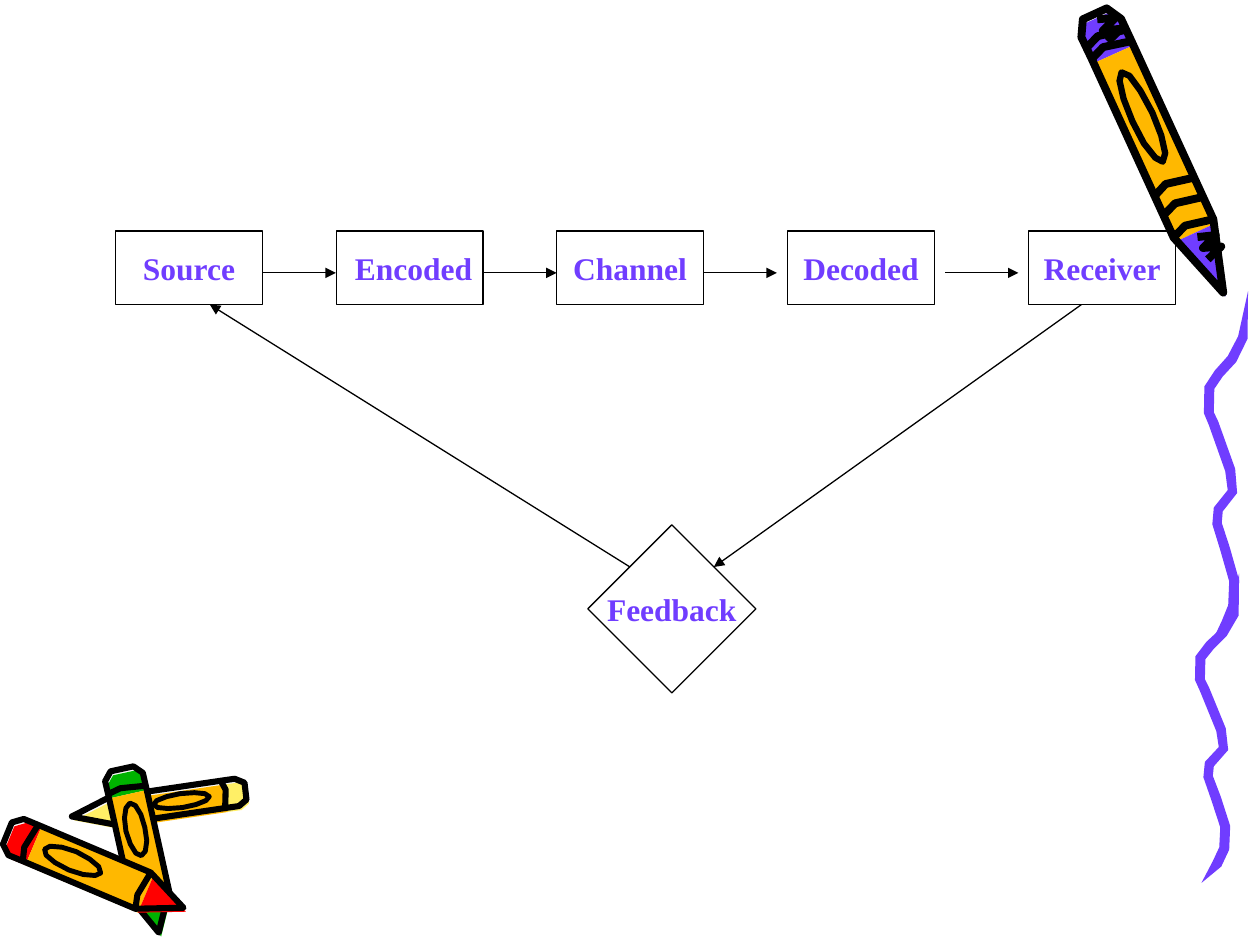
from math import cos, hypot, pi, sin

from lxml.etree import SubElement
from pptx import Presentation
from pptx.dml.color import RGBColor
from pptx.enum.shapes import MSO_CONNECTOR as CONN, MSO_SHAPE as SHAPE
from pptx.enum.text import MSO_ANCHOR as ANCHOR, PP_ALIGN as ALIGN
from pptx.oxml.ns import qn
from pptx.util import Cm, Pt

COLORS = {
    "purple": "703DFF", "orange": "FFB800", "yellow": "FFEF66", "red": "FF0000",
    "green": "00B200", "pale": "F8F8F8", "black": "000000",
}
FONT = "Times New Roman"

BOX_WIDTH, BOX_HEIGHT, BOX_TOP = 2.96, 1.48, 4.66
BOX_BOTTOM = BOX_TOP + BOX_HEIGHT
ARROW_LENGTH, ARROW_Y = 1.48, 5.5
STEPS = {"Source": 2.33, " Encoded": 6.78, "Channel": 11.22,
         "Decoded": 15.88, "Receiver": 20.74}
ARROW_STARTS = [5.29, 9.74, 14.18, 19.05]

CAP_END, SHOULDER = 0.13, 0.77
LABEL_CENTER, LABEL_REACH, LABEL_SPREAD = 0.37, 0.16, 0.5
INK_SHIFT = (0.05, 0.08)

RIBBON_WIDTH, RIBBON_HALF = 0.91, 0.1
RIBBON_COURSE = [
    (0.97, 0), (0.85, 0.13), (0.61, 0.19), (0.32, 0.23), (0.11, 0.27), (0.1, 0.34),
    (0.2, 0.37), (0.57, 0.5), (0.62, 0.56), (0.31, 0.61), (0.28, 0.65),
    (0.46, 0.72), (0.66, 0.81), (0.64, 0.88), (0.48, 0.93), (0.13, 0.99),
]


def color(name):
    return RGBColor.from_string(COLORS[name])


def add_path(s, points, fill=None, stroke=None, close=True):
    grid = [(round(100 * x), round(100 * y)) for x, y in points]
    builder = s.shapes.build_freeform(*grid[0], scale=Cm(0.01))
    builder.add_line_segments(grid[1:], close=close)
    sp = builder.convert_to_shape()
    sp.shadow.inherit = False
    if fill:
        sp.fill.solid()
        sp.fill.fore_color.rgb = color(fill)
    else:
        sp.fill.background()
    if stroke:
        sp.line.color.rgb = color("black")
        sp.line.width = Pt(stroke)
        SubElement(sp._element.spPr.find(qn("a:ln")), qn("a:round"))
    else:
        sp.line.fill.background()


def add_crayon(s, base, tip, half, tint, stroke, bands=(), scribbles=()):
    dx, dy = tip[0] - base[0], tip[1] - base[1]
    length = hypot(dx, dy)

    def place(points, shift=(0, 0)):
        return [(base[0] + along * dx + across * half * dy / length + shift[0],
                 base[1] + along * dy - across * half * dx / length + shift[1])
                for along, across in points]

    cap = [(CAP_END, -1), (0.05, -1), (0, -0.6), (0, 0.6), (0.05, 1), (CAP_END, 1)]
    barrel = [(CAP_END, -1), (CAP_END, 1), (SHOULDER, 1), (SHOULDER, -1)]
    point = [(SHOULDER, -1), (SHOULDER, 1), (1, 0)]
    outline = cap + [(SHOULDER, 1), (1, 0), (SHOULDER, -1)]
    label = [(LABEL_CENTER + LABEL_REACH * cos(k * pi / 6),
              LABEL_SPREAD * sin(k * pi / 6)) for k in range(12)]

    add_path(s, place(outline), "pale")
    for part, fill in ((cap, tint), (barrel, "orange"), (point, tint)):
        add_path(s, place(part, INK_SHIFT), fill)
    add_path(s, place(outline), stroke=stroke)
    add_path(s, place(label), stroke=stroke * 0.8)
    for along in (CAP_END, SHOULDER, *bands):
        bend = [(along, -1), (along - 0.02, -0.3), (along, 1)]
        add_path(s, place(bend), stroke=stroke, close=False)
    for start in scribbles:
        zigzag = [(start + 0.02 * k, 0.8 if k % 2 else 0) for k in range(5)]
        add_path(s, place(zigzag), stroke=stroke, close=False)


def add_ribbon(s, left, top, height):
    course = [(left + x * RIBBON_WIDTH, top + y * height) for x, y in RIBBON_COURSE]
    sides = [], []
    for before, here, after in zip(course, course[1:], course[2:]):
        dx, dy = after[0] - before[0], after[1] - before[1]
        for side, sign in zip(sides, (-1, 1)):
            reach = sign * RIBBON_HALF / hypot(dx, dy)
            side.append((here[0] + reach * dy, here[1] - reach * dx))
    one, other = sides
    add_path(s, [course[0], *one, course[-1], *reversed(other)], "purple")


def add_node(s, kind, text, left, top, width, height):
    sp = s.shapes.add_shape(kind, Cm(left), Cm(top), Cm(width), Cm(height))
    sp.shadow.inherit = False
    sp.fill.background()
    sp.line.color.rgb = color("black")
    sp.line.width = Pt(0.75)
    tf = sp.text_frame
    tf.text = text
    tf.word_wrap = False
    tf.vertical_anchor = ANCHOR.MIDDLE
    p = tf.paragraphs[0]
    p.alignment = ALIGN.CENTER
    font = p.runs[0].font
    font.name, font.size, font.bold = FONT, Pt(18), True
    font.color.rgb = color("purple")


def add_arrow(s, x1, y1, x2, y2):
    arrow = s.shapes.add_connector(CONN.STRAIGHT, Cm(x1), Cm(y1), Cm(x2), Cm(y2))
    arrow.line.color.rgb = color("black")
    arrow.line.width = Pt(0.75)
    props = arrow._element.spPr
    SubElement(props.find(qn("a:ln")), qn("a:tailEnd"), type="triangle")
    SubElement(props, qn("a:effectLst"))


def add_decoration(s):
    add_crayon(s, (4.95, 15.95), (1.45, 16.46), 0.28, "yellow", 3.5)
    add_crayon(s, (2.46, 15.5), (3.2, 18.8), 0.39, "green", 3.5)
    add_crayon(s, (0.15, 16.8), (3.7, 18.3), 0.4, "red", 3.5)
    add_ribbon(s, left=24.1, top=11.56, height=6.3)
    add_ribbon(s, left=24.28, top=5.87, height=7.21)
    add_crayon(s, (22.07, 0.28), (24.66, 5.9), 0.44, "purple", 4.5,
               bands=(0.09, 0.62, 0.69), scribbles=(0.02, 0.8))


def add_process(s):
    for text, left in STEPS.items():
        add_node(s, SHAPE.RECTANGLE, text, left, BOX_TOP, BOX_WIDTH, BOX_HEIGHT)
    for start in ARROW_STARTS:
        add_arrow(s, start, ARROW_Y, start + ARROW_LENGTH, ARROW_Y)
    add_node(s, SHAPE.DIAMOND, "Feedback", 11.85, 10.58, 3.39, 3.39)
    add_arrow(s, 21.8, BOX_BOTTOM, 14.39, 11.43)
    add_arrow(s, 12.7, 11.43, 4.23, BOX_BOTTOM)


def main():
    prs = Presentation()
    prs.slide_width, prs.slide_height = Cm(25.4), Cm(19.05)
    s = prs.slides.add_slide(prs.slide_layouts[6])
    add_decoration(s)
    add_process(s)
    prs.save("out.pptx")


if __name__ == "__main__":
    main()
